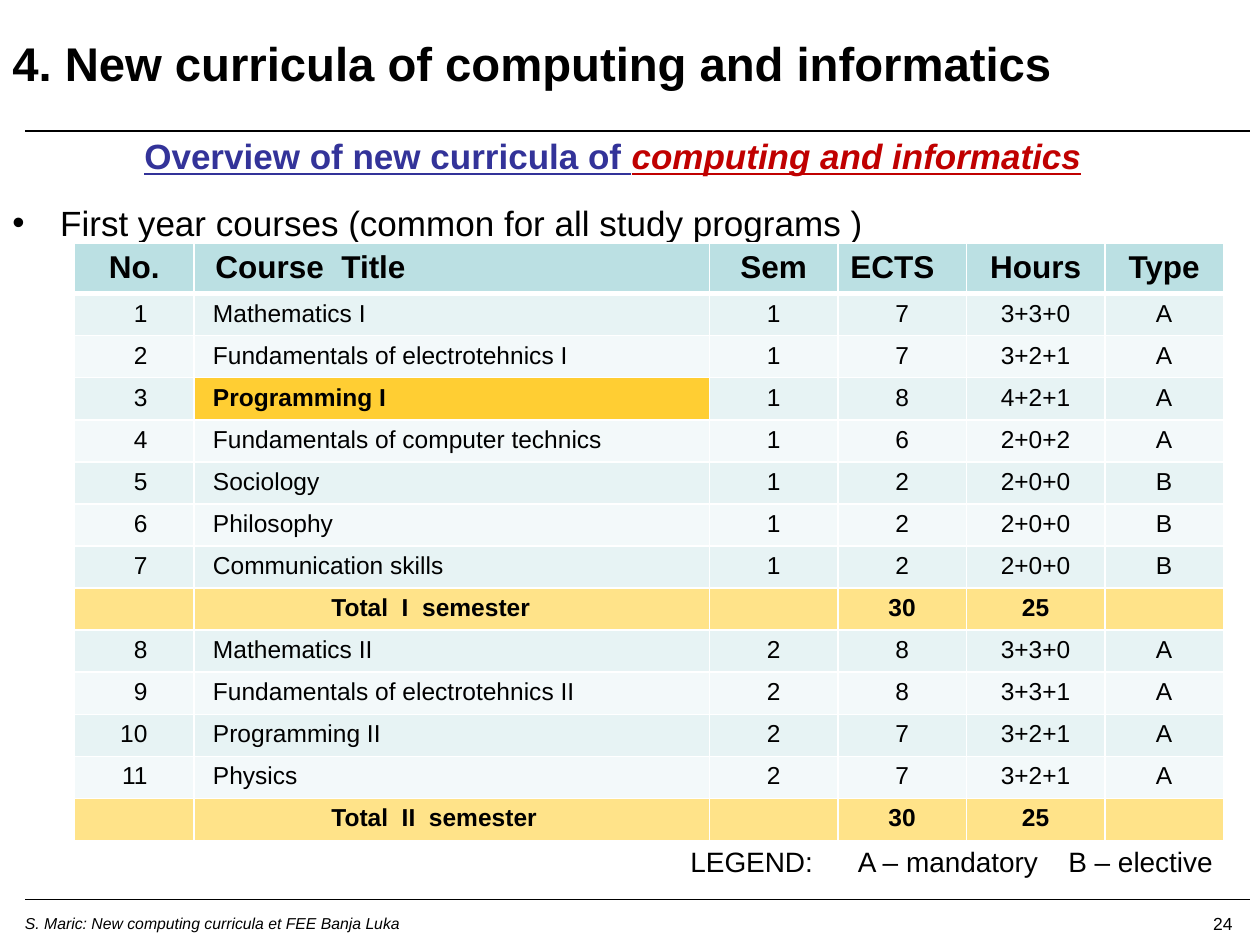
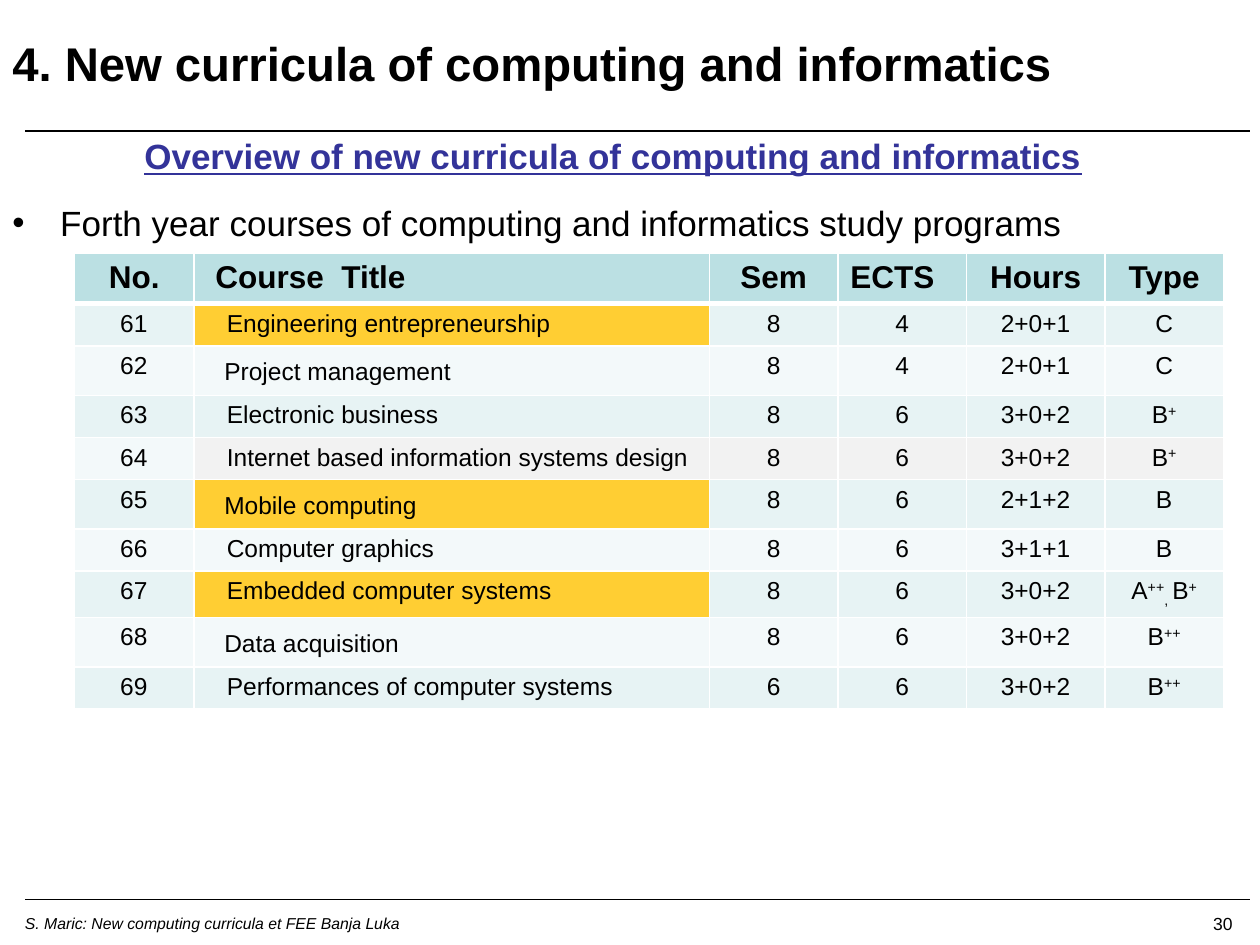
import pptx
import pptx.util
import pptx.dml.color
import pptx.enum.shapes
import pptx.enum.text
import pptx.oxml
import pptx.oxml.ns
from lxml import etree

Inches = pptx.util.Inches
Pt = pptx.util.Pt
ALIGN = pptx.enum.text.PP_ALIGN
ANCHOR = pptx.enum.text.MSO_ANCHOR
qn = pptx.oxml.ns.qn

COLORS = {
    "text": "000000",
    "rule": "000000",
    "heading": "333399",
    "emphasis": "C00000",
    "border": "FFFFFF",
    "header": "BBE0E3",
    "odd": "E7F3F4",
    "even": "F3F9FA",
    "gray": "F2F2F2",
    "total": "FFE389",
    "highlight": "FFCE33",
}
FONT = "Arial"
TITLE = "4. New curricula of computing and informatics"
FOOTER = "S. Maric: New computing curricula et FEE Banja Luka"
HEADERS = ("No.", "Course  Title", "Sem", "ECTS", "Hours", "Type")
COLUMN_WIDTHS = (0.95, 4.09, 1.02, 1.02, 1.1, 0.94)
HEADER_HEIGHT, ROW_HEIGHT = 0.37, 0.31

FIRST_YEAR = [
    ("1", "Mathematics I", "1", "7", "3+3+0", "A"),
    ("2", "Fundamentals of electrotehnics I", "1", "7", "3+2+1", "A"),
    ("3", "Programming I", "1", "8", "4+2+1", "A"),
    ("4", "Fundamentals of computer technics", "1", "6", "2+0+2", "A"),
    ("5", "Sociology", "1", "2", "2+0+0", "B"),
    ("6", "Philosophy", "1", "2", "2+0+0", "B"),
    ("7", "Communication skills", "1", "2", "2+0+0", "B"),
    ("", "Total  I  semester", "", "30", "25", ""),
    ("8", "Mathematics II", "2", "8", "3+3+0", "A"),
    ("9", "Fundamentals of electrotehnics II", "2", "8", "3+3+1", "A"),
    ("10", "Programming II", "2", "7", "3+2+1", "A"),
    ("11", "Physics", "2", "7", "3+2+1", "A"),
    ("", "Total  II  semester", "", "30", "25", ""),
]

B_PLUS = (("B", 0), ("+", 30))
B_PLUS_PLUS = (("B", 0), ("++", 30))
A_OR_B = (("A", 0), ("++", 30), (", ", -25)) + B_PLUS
FOURTH_YEAR = [
    ("61", "Engineering entrepreneurship", "8", "4", "2+0+1", "C"),
    ("62", "Project management", "8", "4", "2+0+1", "C"),
    ("63", "Electronic business", "8", "6", "3+0+2", B_PLUS),
    ("64", "Internet based information systems design", "8", "6", "3+0+2", B_PLUS),
    ("65", "Mobile computing", "8", "6", "2+1+2", "B"),
    ("66", "Computer graphics", "8", "6", "3+1+1", "B"),
    ("67", "Embedded computer systems", "8", "6", "3+0+2", A_OR_B),
    ("68", "Data acquisition", "8", "6", "3+0+2", B_PLUS_PLUS),
    ("69", "Performances of computer systems", "6", "6", "3+0+2", B_PLUS_PLUS),
]
HIGHLIGHTED = {"3", "61", "65", "67"}
LOWERED = {"62", "65", "68"}
GRAY = {"64"}


def rgb(name):
    return pptx.dml.color.RGBColor.from_string(COLORS[name])


def set_font(font, size, color="text", bold=False, italic=False, underline=False):
    font.name, font.size = FONT, Pt(size)
    font.bold, font.italic, font.underline = bold, italic, underline
    font.color.rgb = rgb(color)


def add_text_box(slide, left, top, width, height, anchor=ANCHOR.TOP):
    frame = slide.shapes.add_textbox(
        Inches(left), Inches(top), Inches(width), Inches(height)).text_frame
    frame.word_wrap = True
    frame.vertical_anchor = anchor
    return frame


def add_line_of_text(slide, box, text, size, align=ALIGN.LEFT, anchor=ANCHOR.TOP, **style):
    paragraph = add_text_box(slide, *box, anchor=anchor).paragraphs[0]
    paragraph.text = text
    paragraph.alignment = align
    set_font(paragraph.font, size, **style)


def add_rule(slide, y):
    rule = slide.shapes.add_connector(
        pptx.enum.shapes.MSO_CONNECTOR.STRAIGHT,
        Inches(0.2), Inches(y), Inches(9.92), Inches(y))
    rule.line.color.rgb = rgb("rule")
    rule.line.width = Pt(0.75)
    etree.SubElement(rule._element.spPr, qn("a:effectLst"))


def add_frame(slide, number):
    for y in (1.04, 7.14):
        add_rule(slide, y)
    add_line_of_text(slide, (0.1, 7.2, 7.17, 0.25), FOOTER, 9, italic=True)
    add_line_of_text(slide, (8.15, 7.2, 1.73, 0.24), number, 10, ALIGN.RIGHT)
    add_line_of_text(slide, (0, 0.21, 8.54, 0.56), TITLE, 27,
                     anchor=ANCHOR.BOTTOM, bold=True)


def add_overview(slide, heading_parts, topic):
    frame = add_text_box(slide, 0, 1.02, 9.73, 0.9)
    heading = frame.paragraphs[0]
    heading.alignment = ALIGN.CENTER
    heading.space_after = Pt(14)
    for text, color, italic in heading_parts:
        run = heading.add_run()
        run.text = text
        set_font(run.font, 20, color, bold=True, italic=italic, underline=True)

    bullet = frame.add_paragraph()
    bullet.text = topic
    properties = bullet._p.get_or_add_pPr()
    properties.set("marL", str(Inches(0.38)))
    properties.set("indent", str(-Inches(0.38)))
    etree.SubElement(properties, qn("a:buFont"), typeface=FONT)
    etree.SubElement(properties, qn("a:buChar"), char="•")
    set_font(bullet.font, 20)


def set_borders(cell, widths):
    properties = cell._tc.get_or_add_tcPr()
    for edge, points in widths.items():
        line = etree.SubElement(properties, qn("a:ln" + edge), w=str(Pt(points)))
        fill = etree.SubElement(line, qn("a:solidFill"))
        etree.SubElement(fill, qn("a:srgbClr"), val=COLORS["border"])


def fill_cell(cell, content, fill, borders, size, align, bold=False):
    set_borders(cell, borders)
    cell.fill.solid()
    cell.fill.fore_color.rgb = rgb(fill)
    paragraph = cell.text_frame.paragraphs[0]
    paragraph.alignment = align
    set_font(paragraph.font, size, bold=bold)
    if not content:
        etree.SubElement(paragraph._p, qn("a:endParaRPr"), sz=str(size * 100))
        return
    parts = ((content, 0),) if isinstance(content, str) else content
    for text, baseline in parts:
        run = paragraph.add_run()
        run.text = text
        if baseline:
            run.font._element.set("baseline", str(baseline * 1000))


def fill_header(table):
    borders = {"L": 1, "R": 1, "T": 1, "B": 3}
    for column, label in enumerate(HEADERS):
        align = ALIGN.LEFT if label in ("Course  Title", "ECTS") else ALIGN.CENTER
        fill_cell(table.cell(0, column), label, "header", borders, 18, align, True)
    table.cell(0, 1).margin_left = Inches(0.17)


def fill_course(table, row, course, title_indent):
    number = course[0]
    is_total = not number
    if is_total:
        row_fill = "total"
    else:
        row_fill = "odd" if row % 2 else "even"
    for column, content in enumerate(course):
        fill, bold = row_fill, is_total
        if number in GRAY and column:
            fill = "gray"
        if number in HIGHLIGHTED and column == 1:
            fill, bold = "highlight", number == "3"
        align = (ALIGN.RIGHT, ALIGN.LEFT)[column] if column < 2 else ALIGN.CENTER
        fill_cell(table.cell(row, column), content, fill,
                  {"L": 1, "R": 1, "B": 1}, 14, align, bold)
    table.cell(row, 0).margin_right = Inches(0.37)
    title = table.cell(row, 1)
    title.margin_left = Inches(1.09 if is_total else title_indent)
    if number in LOWERED:
        title.margin_left = Inches(title_indent - 0.02)
        title.margin_top, title.margin_bottom = Inches(0.1), Inches(0.06)


def add_course_table(slide, top, courses, title_indent):
    height = HEADER_HEIGHT + ROW_HEIGHT * len(courses)
    table = slide.shapes.add_table(
        len(courses) + 1, len(HEADERS), Inches(0.59), Inches(top),
        Inches(sum(COLUMN_WIDTHS)), Inches(height)).table
    table.first_row = table.horz_banding = False
    for column, width in zip(table.columns, COLUMN_WIDTHS):
        column.width = Inches(width)
    for row in table.rows:
        row.height = Inches(ROW_HEIGHT)
    table.rows[0].height = Inches(HEADER_HEIGHT)
    fill_header(table)
    for row, course in enumerate(courses, 1):
        fill_course(table, row, course, title_indent)


def add_legend(slide):
    frame = add_text_box(slide, 5.48, 6.7, 4.3, 0.26)
    frame.margin_left = frame.margin_right = frame.margin_top = frame.margin_bottom = 0
    legend = frame.paragraphs[0]
    legend.text = "LEGEND:\tA – mandatory\tB – elective"
    tabs = etree.SubElement(legend._p.get_or_add_pPr(), qn("a:tabLst"))
    for position in (1.33, 3):
        etree.SubElement(tabs, qn("a:tab"), pos=str(Inches(position)), algn="l")
    set_font(legend.font, 16)


def main():
    deck = pptx.Presentation()
    deck.slide_width, deck.slide_height = Inches(10), Inches(7.5)
    blank = deck.slide_layouts[6]

    first_year = deck.slides.add_slide(blank)
    add_frame(first_year, "24")
    add_overview(first_year,
                 [("Overview of new curricula of ", "heading", False),
                  ("computing and informatics", "emphasis", True)],
                 "First year courses (common for all study programs )")
    add_course_table(first_year, 1.93, FIRST_YEAR, 0.15)
    add_legend(first_year)

    fourth_year = deck.slides.add_slide(blank)
    add_frame(fourth_year, "30")
    add_overview(fourth_year,
                 [("Overview of new curricula of computing and informatics",
                   "heading", False)],
                 "Forth year courses of computing and informatics study programs")
    add_course_table(fourth_year, 2.01, FOURTH_YEAR, 0.26)

    deck.save("out.pptx")


if __name__ == "__main__":
    main()
